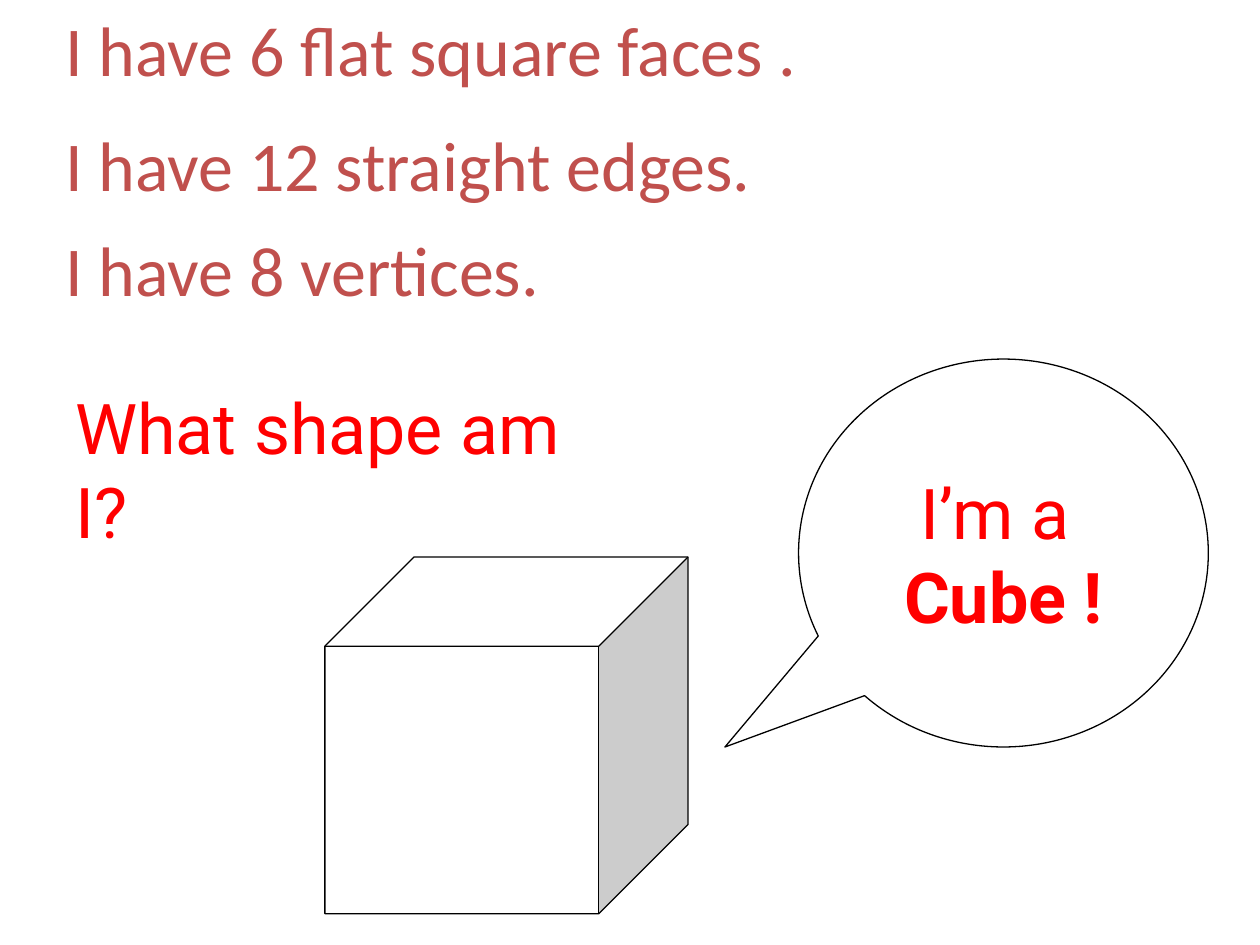
"""Build a riddle slide whose answer is a cube."""
from dataclasses import dataclass

from pptx import Presentation
from pptx.dml.color import RGBColor
from pptx.enum.shapes import MSO_SHAPE
from pptx.enum.text import MSO_ANCHOR, PP_ALIGN
from pptx.util import Cm, Pt


@dataclass(frozen=True)
class Theme:
    clue: RGBColor = RGBColor(0xC0, 0x50, 0x4D)
    ask: RGBColor = RGBColor(0xFF, 0x00, 0x00)
    fill: RGBColor = RGBColor(0xFF, 0xFF, 0xFF)
    line: RGBColor = RGBColor(0x00, 0x00, 0x00)
    size: Pt = Pt(40)
    edge: Pt = Pt(0.75)


theme = Theme()


def write(para, text, *, font, color, bold=False, align=PP_ALIGN.LEFT):
    para.alignment = align
    run = para.add_run()
    run.text = text
    run.font.name = font
    run.font.size = theme.size
    run.font.bold = bold
    run.font.color.rgb = color


def draw(kind, left, top, width, height, *adjust):
    shape = slide.shapes.add_shape(kind, Cm(left), Cm(top), Cm(width), Cm(height))
    shape.shadow.inherit = False
    shape.fill.solid()
    shape.fill.fore_color.rgb = theme.fill
    shape.line.color.rgb = theme.line
    shape.line.width = theme.edge
    for index, value in enumerate(adjust):
        shape.adjustments[index] = value
    return shape


deck = Presentation()
deck.slide_width, deck.slide_height = Cm(25.4), Cm(19.05)
slide = deck.slides.add_slide(deck.slide_layouts[6])

lines = [
    ("I have 6 flat square faces .", 1.07, 0, 20.12, "Calibri", theme.clue),
    ("I have 12 straight edges.", 1.07, 2.33, 20.12, "Calibri", theme.clue),
    ("I have 8 vertices.", 1.07, 4.45, 20.12, "Calibri", theme.clue),
    ("What shape am I?", 1.27, 7.62, 10.82, "Roboto", theme.ask),
]
for text, left, top, width, font, color in lines:
    box = slide.shapes.add_textbox(Cm(left), Cm(top), Cm(width), Cm(1.96))
    box.text_frame.word_wrap = True
    write(box.text_frame.paragraphs[0], text, font=font, color=color)

bubble = draw(MSO_SHAPE.OVAL_CALLOUT, 16.1, 7.24, 8.26, 7.82, -0.68, 0.5)
frame = bubble.text_frame
frame.word_wrap = False
frame.vertical_anchor = MSO_ANCHOR.MIDDLE
style = {"font": "Roboto", "color": theme.ask, "align": PP_ALIGN.CENTER}
write(frame.paragraphs[0], "I’m a ", **style)
write(frame.add_paragraph(), "Cube !", bold=True, **style)

draw(MSO_SHAPE.CUBE, 6.55, 11.23, 7.32, 7.19, 0.25)

deck.save("out.pptx")
